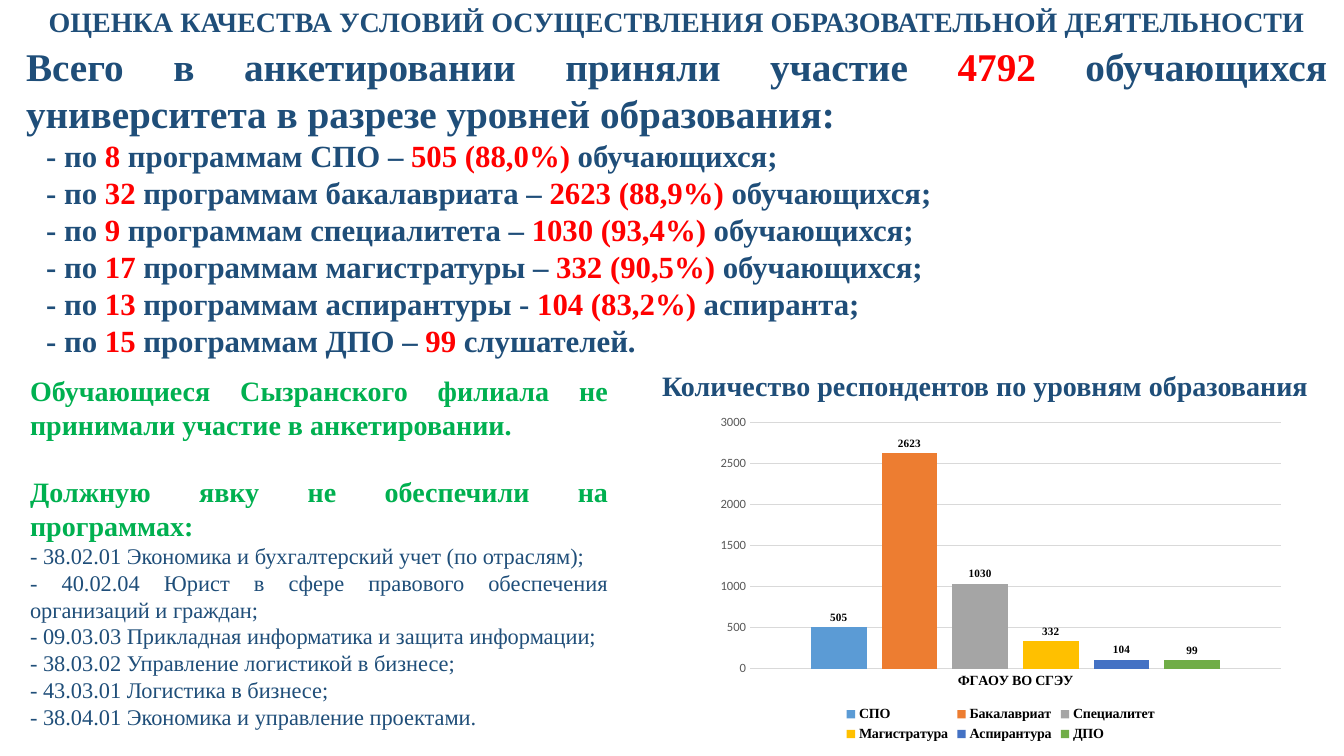
from dataclasses import dataclass

from pptx import Presentation
from pptx.chart.data import CategoryChartData
from pptx.dml.color import RGBColor
from pptx.enum.chart import XL_CHART_TYPE as ChartType
from pptx.enum.chart import XL_LABEL_POSITION as LabelPosition
from pptx.enum.chart import XL_LEGEND_POSITION as LegendPosition
from pptx.enum.chart import XL_TICK_MARK as TickMark
from pptx.enum.text import MSO_AUTO_SIZE as AutoSize
from pptx.enum.text import PP_ALIGN as Align
from pptx.util import Inches, Pt

COLORS = {
    "navy": "1F4E79",
    "red": "FF0000",
    "green": "00B050",
    "black": "000000",
    "axis": "595959",
    "grid": "D9D9D9",
}
SERIF = "Times New Roman"
SANS = "Calibri"


@dataclass
class Span:
    text: str
    color: str = "navy"


@dataclass
class Para:
    spans: list[Span]
    size: float
    bold: bool = True
    align: Align = Align.JUSTIFY
    space_before: float = 0


@dataclass
class TextBlock:
    left: float
    top: float
    width: float
    height: float
    paras: list[Para]
    wrap: bool = True
    grow: bool = True


@dataclass
class Level:
    """One level of education: its line in the list and its bar."""
    programs: str
    label: str
    respondents: str
    ending: str
    series: str
    value: int
    color: str

    def para(self) -> Para:
        return Para([Span("- по "), Span(f"{self.programs} ", "red"), Span(self.label),
                     Span(f"{self.respondents} ", "red"), Span(self.ending)], 22)


LEVELS = [
    Level("8", "программам СПО – ", "505 (88,0%)", "обучающихся;",
          "СПО", 505, "5B9BD5"),
    Level("32", "программам бакалавриата – ", "2623 (88,9%)", "обучающихся;",
          "Бакалавриат", 2623, "ED7D31"),
    Level("9", "программам специалитета – ", "1030 (93,4%)", "обучающихся;",
          "Специалитет", 1030, "A5A5A5"),
    Level("17", "программам магистратуры – ", "332 (90,5%)", "обучающихся;",
          "Магистратура", 332, "FFC000"),
    Level("13", "программам аспирантуры - ", "104 (83,2%)", "аспиранта;",
          "Аспирантура", 104, "4472C4"),
    Level("15", "программам ДПО – ", "99", "слушателей.",
          "ДПО", 99, "70AD47"),
]

LOW_TURNOUT = [
    "38.02.01 Экономика и бухгалтерский учет (по отраслям);",
    "40.02.04 Юрист в сфере правового обеспечения организаций и граждан;",
    "09.03.03 Прикладная информатика и защита информации;",
    "38.03.02 Управление логистикой в бизнесе;",
    "43.03.01 Логистика в бизнесе;",
    "38.04.01 Экономика и управление проектами.",
]

TEXT_BLOCKS = [
    # Slide title
    TextBlock(0.08, 0, 13.26, 0.44, [
        Para([Span("ОЦЕНКА КАЧЕСТВА УСЛОВИЙ ОСУЩЕСТВЛЕНИЯ ОБРАЗОВАТЕЛЬНОЙ ДЕЯТЕЛЬНОСТИ")],
             20, align=Align.CENTER)]),
    # Respondents by level
    TextBlock(0.36, 1.31, 12.58, 6.41, [level.para() for level in LEVELS], grow=False),
    # Total number of respondents
    TextBlock(0.16, 0.37, 13.1, 1.04, [
        Para([Span("Всего в анкетировании приняли участие "), Span("4792", "red"),
              Span(" обучающихся университета в разрезе уровней образования:")], 28)]),
    # Chart heading
    TextBlock(6.44, 3.61, 6.66, 0.44, [
        Para([Span("Количество респондентов по уровням образования")],
             20, align=Align.CENTER)], wrap=False),
    # Programs with low turnout
    TextBlock(0.2, 3.66, 5.93, 4.01, [
        Para([Span("Обучающиеся Сызранского филиала не принимали участие в анкетировании.",
                   "green")], 20),
        Para([Span("Должную явку не обеспечили на программах:", "green")], 20,
             space_before=24),
        *[Para([Span(f"- {program}")], 16, bold=False) for program in LOW_TURNOUT]]),
]


def rgb(name: str) -> RGBColor:
    return RGBColor.from_string(COLORS[name])


def set_font(font, size: float, color: str, bold: bool = False, name: str = SERIF) -> None:
    font.size, font.bold, font.name = Pt(size), bold, name
    font.color.rgb = rgb(color)


def draw_text(page, block: TextBlock) -> None:
    box = page.shapes.add_textbox(Inches(block.left), Inches(block.top),
                                  Inches(block.width), Inches(block.height))
    frame = box.text_frame
    frame.word_wrap = block.wrap
    frame.auto_size = AutoSize.SHAPE_TO_FIT_TEXT if block.grow else AutoSize.NONE
    for index, para in enumerate(block.paras):
        paragraph = frame.add_paragraph() if index else frame.paragraphs[0]
        paragraph.alignment = para.align
        if para.space_before:
            paragraph.space_before = Pt(para.space_before)
        for span in para.spans:
            run = paragraph.add_run()
            run.text = span.text
            set_font(run.font, para.size, span.color, para.bold)


def draw_chart(page, levels: list[Level]) -> None:
    data = CategoryChartData()
    data.categories = ["ФГАОУ ВО СГЭУ"]
    for level in levels:
        data.add_series(level.series, [level.value])
    chart = page.shapes.add_chart(ChartType.COLUMN_CLUSTERED, Inches(7.03), Inches(4.05),
                                  Inches(5.79), Inches(3.35), data).chart
    chart.has_title = False
    set_font(chart.font, 10, "black", name=SANS)

    # Bars and their labels
    plot = chart.plots[0]
    plot.gap_width, plot.overlap = 219, -27
    plot.vary_by_categories = False
    for series, level in zip(plot.series, levels):
        series.format.fill.solid()
        series.format.fill.fore_color.rgb = RGBColor.from_string(level.color)
        labels = series.data_labels
        labels.show_value = True
        labels.position = LabelPosition.OUTSIDE_END
        set_font(labels.font, 8, "black", bold=True)

    # Axes
    category, value = chart.category_axis, chart.value_axis
    for axis in (category, value):
        axis.major_tick_mark = axis.minor_tick_mark = TickMark.NONE
    set_font(category.tick_labels.font, 10, "black", bold=True)
    set_font(value.tick_labels.font, 9, "axis", name=SANS)
    value.format.line.fill.background()
    value.has_major_gridlines = True
    for line in (category.format.line, value.major_gridlines.format.line):
        line.color.rgb = rgb("grid")
        line.width = Pt(0.75)

    # Legend
    chart.has_legend = True
    chart.legend.position = LegendPosition.BOTTOM
    chart.legend.include_in_layout = False
    set_font(chart.legend.font, 10, "black", bold=True)


def main() -> None:
    deck = Presentation()
    deck.slide_width, deck.slide_height = Inches(13.33), Inches(7.5)
    page = deck.slides.add_slide(deck.slide_layouts[6])
    for block in TEXT_BLOCKS:
        draw_text(page, block)
    draw_chart(page, LEVELS)
    deck.save("out.pptx")


if __name__ == "__main__":
    main()
